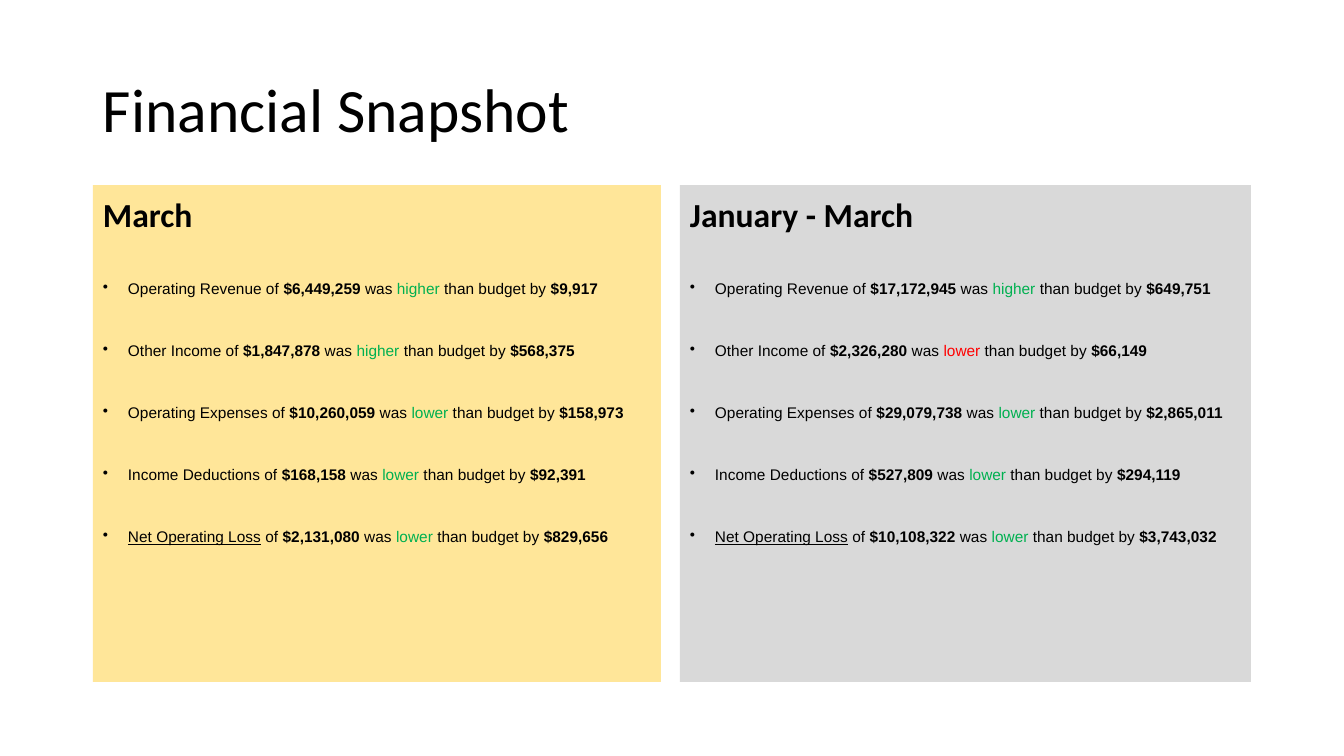
from lxml import etree
from pptx import Presentation
from pptx.dml.color import RGBColor
from pptx.enum.shapes import MSO_SHAPE
from pptx.enum.text import MSO_ANCHOR, PP_ALIGN
from pptx.oxml.ns import qn
from pptx.util import Pt

RECT = MSO_SHAPE.RECTANGLE
TOP, MIDDLE = MSO_ANCHOR.TOP, MSO_ANCHOR.MIDDLE
LEFT = PP_ALIGN.LEFT
EMU_PER_PX = 914400 / 100.8

BLACK, GREEN, RED = "000000", "00B050", "FF0000"
GOLD, GREY = "FFE699", "D9D9D9"


def px(n):
    return round(n * EMU_PER_PX)


def rgb(value):
    return RGBColor.from_string(value)


class Deck:
    heading_font, body_font = "Calibri", "Arial"

    def __init__(self, width, height):
        self.prs = Presentation()
        self.prs.slide_width, self.prs.slide_height = px(width), px(height)
        self.s = self.prs.slides.add_slide(self.prs.slide_layouts[6])

    def frame(self, sp, anchor, top=5):
        tf = sp.text_frame
        tf.word_wrap = True
        tf.vertical_anchor = anchor
        tf.margin_left = tf.margin_right = px(10)
        tf.margin_top, tf.margin_bottom = px(top), px(5)
        return tf

    def style(self, p, font, size, bold=None):
        p.alignment = LEFT
        p.line_spacing = 0.9
        p.font.name, p.font.size, p.font.bold = font, Pt(size), bold
        p.font.color.rgb = rgb(BLACK)

    def title(self, text, x, y, w, h):
        sp = self.s.shapes.add_textbox(px(x), px(y), px(w), px(h))
        p = self.frame(sp, MIDDLE).paragraphs[0]
        p.text = text
        self.style(p, self.heading_font, 44)

    def block(self, fill, x, y, w, h):
        sp = self.s.shapes.add_shape(RECT, px(x), px(y), px(w), px(h))
        sp.shadow.inherit = False
        sp.fill.solid()
        sp.fill.fore_color.rgb = rgb(fill)
        sp.line.fill.background()
        return sp

    def heading(self, text, fill, x, y, w, h):
        p = self.frame(self.block(fill, x, y, w, h), TOP, 13).paragraphs[0]
        p.text = text
        self.style(p, self.heading_font, 24, True)

    def bullets(self, items, fill, x, y, w, h):
        tf = self.frame(self.block(fill, x, y, w, h), TOP)
        for i, item in enumerate(items):
            p = tf.add_paragraph() if i else tf.paragraphs[0]
            self.style(p, self.body_font, 11)
            p.space_after = Pt(32.4)
            self.bullet(p)
            self.sentence(p, *item)

    def bullet(self, p):
        pPr = p._p.get_or_add_pPr()
        pPr.set("marL", str(px(25)))
        pPr.set("indent", str(-px(25)))
        bu = etree.Element(qn("a:buChar"), char="•")
        pPr.find(qn("a:defRPr")).addprevious(bu)

    def sentence(self, p, label, amount, trend, color, gap):
        self.run(p, label, underline=label == "Net Operating Loss")
        self.run(p, " of ")
        self.run(p, amount, bold=True)
        self.run(p, " was ")
        self.run(p, trend, color=color)
        self.run(p, " than budget by ")
        self.run(p, gap, bold=True)

    def run(self, p, text, bold=None, underline=False, color=BLACK):
        r = p.add_run()
        r.text = text
        r.font.bold = bold
        r.font.underline = underline or None
        r.font.color.rgb = rgb(color)


# Results against budget
MARCH = [
    ("Operating Revenue", "$6,449,259", "higher", GREEN, "$9,917"),
    ("Other Income", "$1,847,878", "higher", GREEN, "$568,375"),
    ("Operating Expenses", "$10,260,059", "lower", GREEN, "$158,973"),
    ("Income Deductions", "$168,158", "lower", GREEN, "$92,391"),
    ("Net Operating Loss", "$2,131,080", "lower", GREEN, "$829,656"),
]
QUARTER = [
    ("Operating Revenue", "$17,172,945", "higher", GREEN, "$649,751"),
    ("Other Income", "$2,326,280", "lower", RED, "$66,149"),
    ("Operating Expenses", "$29,079,738", "lower", GREEN, "$2,865,011"),
    ("Income Deductions", "$527,809", "lower", GREEN, "$294,119"),
    ("Net Operating Loss", "$10,108,322", "lower", GREEN, "$3,743,032"),
]


def main():
    deck = Deck(1344, 756)
    deck.title("Financial Snapshot", 93, 40, 1159, 146)

    # One panel per period: heading above its bullets
    for name, items, fill, x, w in (
        ("March", MARCH, GOLD, 93, 568),
        ("January - March", QUARTER, GREY, 680, 571),
    ):
        deck.heading(name, fill, x, 185, w, 91)
        deck.bullets(items, fill, x, 276, w, 406)

    deck.prs.save("out.pptx")


if __name__ == "__main__":
    main()
